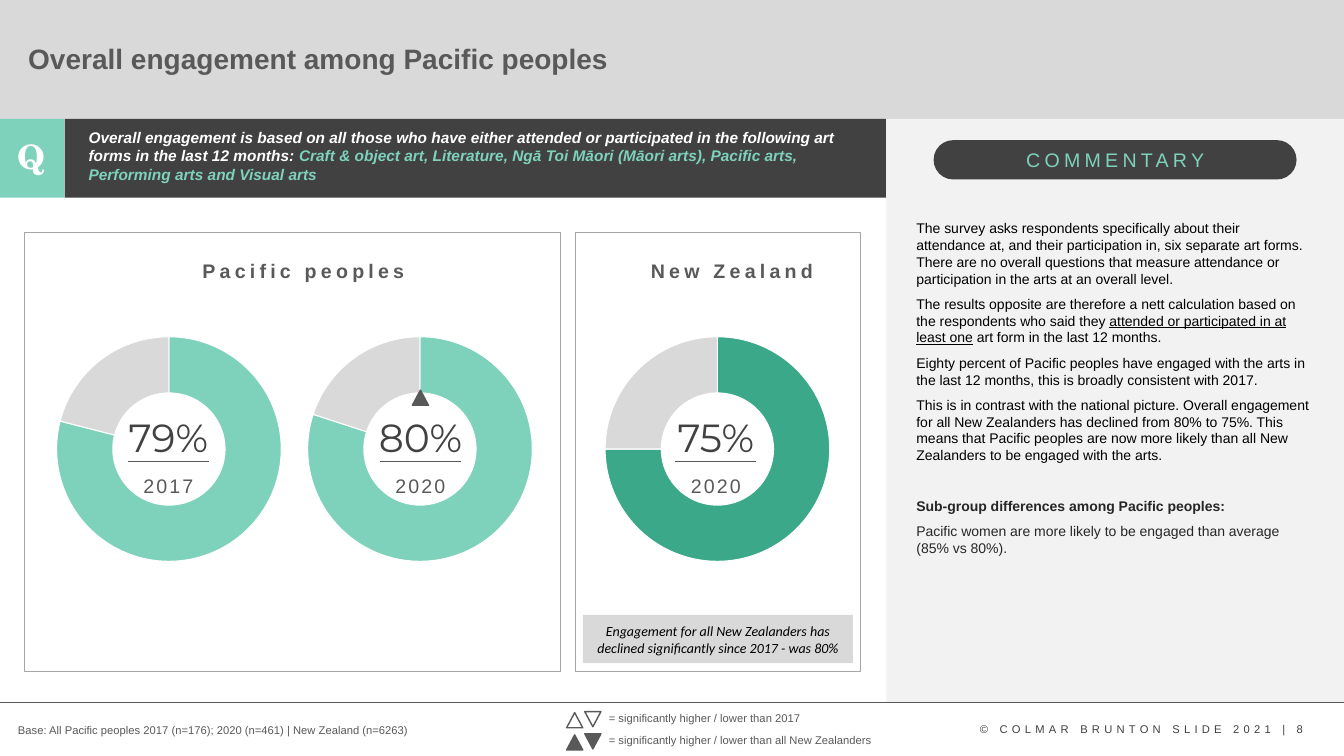
from lxml import etree
from pptx import Presentation
from pptx.chart.data import CategoryChartData
from pptx.dml.color import RGBColor
from pptx.enum.chart import XL_CHART_TYPE
from pptx.enum.shapes import MSO_CONNECTOR, MSO_SHAPE
from pptx.enum.text import MSO_ANCHOR, MSO_AUTO_SIZE, PP_ALIGN
from pptx.oxml import parse_xml
from pptx.oxml.ns import nsdecls, qn
from pptx.util import Inches, Pt

WHITE = RGBColor(0xFF, 0xFF, 0xFF)
BLACK = RGBColor(0, 0, 0)
INK = RGBColor(0x26, 0x26, 0x26)
CHARCOAL = RGBColor(0x41, 0x41, 0x41)
FOOTER_GREY = RGBColor(0x40, 0x40, 0x40)
GREY = RGBColor(0x59, 0x59, 0x59)
FRAME_GREY = RGBColor(0xA6, 0xA6, 0xA6)
LIGHT_GREY = RGBColor(0xD9, 0xD9, 0xD9)
PALE_GREY = RGBColor(0xF2, 0xF2, 0xF2)
MINT = RGBColor(0x7E, 0xD2, 0xBB)
GREEN = RGBColor(0x3A, 0xA8, 0x89)

presentation = Presentation()
presentation.slide_width = Inches(13.33)
presentation.slide_height = Inches(7.5)
slide = presentation.slides.add_slide(presentation.slide_layouts[5])


def add_shape(kind, left, top, width, height, fill=None, line=None, weight=1.0):
    shape = slide.shapes.add_shape(
        kind, Inches(left), Inches(top), Inches(width), Inches(height))
    shape.shadow.inherit = False
    if fill is None:
        shape.fill.background()
    else:
        shape.fill.solid()
        shape.fill.fore_color.rgb = fill
    if line is None:
        shape.line.fill.background()
    else:
        shape.line.color.rgb = line
        shape.line.width = Pt(weight)
    return shape


def add_text(runs, place=None, shape=None, size=10, color=GREY, font="Arial",
             bold=False, italic=False, align=PP_ALIGN.LEFT, spacing=0,
             wrap=True, before=0, new_paragraph=False):
    """Write a string, or (text, changes) runs, into a shape or a new text box."""
    if shape is None:
        shape = slide.shapes.add_textbox(*[Inches(length) for length in place])
        shape.text_frame.auto_size = MSO_AUTO_SIZE.SHAPE_TO_FIT_TEXT
    frame = shape.text_frame
    frame.word_wrap = wrap
    paragraph = frame.add_paragraph() if new_paragraph else frame.paragraphs[0]
    paragraph.alignment = align
    paragraph.space_before = Pt(before)
    for text, changes in [(runs, {})] if isinstance(runs, str) else runs:
        run = paragraph.add_run()
        run.text = text
        run.font.name = font
        run.font.size = Pt(size)
        run.font.bold = bold
        run.font.italic = italic
        run.font.underline = changes.get("underline")
        run.font.color.rgb = changes.get("color", color)
        if spacing:
            run.font._element.set("spc", str(int(spacing * 100)))
    return shape


# Title band
band = add_shape(MSO_SHAPE.RECTANGLE, 0, -0.02, 13.33, 1.2, LIGHT_GREY)
title = slide.shapes.title
title.left, title.top = Inches(0.18), Inches(0.21)
title.width, title.height = Inches(11.19), Inches(0.78)
add_text("Overall engagement among Pacific peoples", shape=title, size=20, bold=True)
title.text_frame.vertical_anchor = MSO_ANCHOR.MIDDLE
title.text_frame.paragraphs[0].line_spacing = 0.9
band._element.addnext(title._element)

# Question strip
add_shape(MSO_SHAPE.RECTANGLE, 0.64, 1.18, 8.15, 0.78, CHARCOAL)
add_shape(MSO_SHAPE.RECTANGLE, 0, 1.18, 0.64, 0.78, MINT)
add_text("Q", (0.08, 1.3, 0.47, 0.5), size=24, color=WHITE,
         font="TeX Gyre Schola", bold=True, align=PP_ALIGN.CENTER)
add_text([
    ("Overall engagement is based on all those who have either attended or "
     "participated in the following art forms in the last 12 months: ", {}),
    ("Craft & object art, Literature, Ngā Toi Māori (Māori arts), Pacific arts, "
     "Performing arts and Visual arts", {"color": MINT}),
], (0.78, 1.22, 7.92, 0.66), size=11, color=WHITE, bold=True, italic=True)

# Commentary panel
add_shape(MSO_SHAPE.RECTANGLE, 8.79, 1.18, 4.55, 5.79, PALE_GREY)
pill = add_shape(MSO_SHAPE.ROUNDED_RECTANGLE, 9.26, 1.39, 3.6, 0.39, CHARCOAL)
pill.adjustments[0] = 0.5
add_text("COMMENTARY", (10.08, 1.42, 2.02, 0.34), size=14, color=MINT,
         spacing=3, wrap=False)
commentary = add_text(
    "The survey asks respondents specifically about their attendance at, and their "
    "participation in, six separate art forms. There are no overall questions that "
    "measure attendance or participation in the arts at an overall level.",
    (8.99, 2.13, 4.11, 3.47), color=BLACK)
for runs, color, bold, before in [
    ([("The results opposite are therefore a nett calculation based on the "
       "respondents who said they ", {}),
      ("attended or participated in at least one", {"underline": True}),
      (" art form in the last 12 months.", {})], BLACK, False, 6),
    ("Eighty percent of Pacific peoples have engaged with the arts in the last "
     "12 months, this is broadly consistent with 2017.", BLACK, False, 6),
    ("This is in contrast with the national picture. Overall engagement for all New "
     "Zealanders has declined from 80% to 75%. This means that Pacific peoples are "
     "now more likely than all New Zealanders to be engaged with the arts.",
     BLACK, False, 6),
    ("Sub-group differences among Pacific peoples:", INK, True, 24),
    ("Pacific women are more likely to be engaged than average (85% vs 80%).",
     INK, False, 6),
]:
    add_text(runs, shape=commentary, color=color, bold=bold, before=before,
             new_paragraph=True)

# Framed panels with headings
for heading, frame_left, frame_width, text_left, text_width in [
    ("Pacific peoples", 0.24, 5.32, 1.88, 2.26),
    ("New Zealand", 5.71, 2.82, 6.33, 1.86),
]:
    add_shape(MSO_SHAPE.RECTANGLE, frame_left, 2.31, frame_width, 4.35,
              line=FRAME_GREY, weight=0.5)
    add_text(heading, (text_left, 2.52, text_width, 0.34), size=14, bold=True,
             align=PP_ALIGN.CENTER, spacing=3, wrap=False)

# Doughnuts with their centre labels
rules = [(0, 6.97, 13.33)]
for engaged, year, color, chart_left, center in [
    (79, "2017", MINT, -0.21, 1.67),
    (80, "2020", MINT, 2.28, 4.17),
    (75, "2020", GREEN, 5.23, 7.1),
]:
    data = CategoryChartData()
    data.categories = ["1", "2"]
    data.add_series("Series 1", (engaged, 100 - engaged))
    chart = slide.shapes.add_chart(
        XL_CHART_TYPE.DOUGHNUT, Inches(chart_left), Inches(3.01),
        Inches(3.69), Inches(2.81), data).chart
    chart.has_legend = False
    chart.has_title = False
    chart.font.name = "Arial"
    chart.font.size = Pt(12)
    chart.font.color.rgb = WHITE
    plot = chart.plots[0]
    plot.vary_by_categories = False
    for index, slice_color in enumerate((color, LIGHT_GREY)):
        point = plot.series[0].points[index]
        point.format.fill.solid()
        point.format.fill.fore_color.rgb = slice_color
        point.format.line.color.rgb = WHITE
        point.format.line.width = Pt(0.75)
    plot_area = chart._chartSpace.chart.plotArea
    plot_area.find(".//" + qn("c:holeSize")).set("val", "74")
    for old_layout in plot_area.findall(qn("c:layout")):
        plot_area.remove(old_layout)
    plot_area.insert(0, parse_xml(
        f'<c:layout {nsdecls("c")}><c:manualLayout><c:layoutTarget val="inner"/>'
        '<c:xMode val="edge"/><c:yMode val="edge"/><c:x val="0.209"/>'
        '<c:y val="0.118"/><c:w val="0.604"/><c:h val="0.793"/>'
        '</c:manualLayout></c:layout>'))
    add_text(f"{engaged}%", (center - 0.56, 4.05, 1.12, 0.57), size=28,
             color=CHARCOAL, font="Montserrat", align=PP_ALIGN.CENTER, wrap=False)
    add_text(year, (center - 0.36, 4.65, 0.72, 0.34), size=14,
             align=PP_ALIGN.CENTER, spacing=1.5, wrap=False)
    rules.append((center - 0.4, 4.58, center + 0.4))

# Footer rule and the rules under the percentages
for start, top, end in rules:
    rule = slide.shapes.add_connector(
        MSO_CONNECTOR.STRAIGHT, Inches(start), Inches(top), Inches(end), Inches(top))
    rule.line.color.rgb = GREY
    rule.line.width = Pt(0.5)
    etree.SubElement(rule._element.spPr, qn("a:effectLst"))

# Significance marker and note
add_shape(MSO_SHAPE.ISOSCELES_TRIANGLE, 4.09, 3.87, 0.16, 0.15, GREY, GREY)
note = add_shape(MSO_SHAPE.RECTANGLE, 5.78, 6.1, 2.68, 0.48, LIGHT_GREY)
note.text_frame.vertical_anchor = MSO_ANCHOR.MIDDLE
add_text("Engagement for all New Zealanders has declined significantly since 2017 "
         "- was 80%", shape=note, color=BLACK, font="Calibri", italic=True,
         align=PP_ALIGN.CENTER)

# Footer with legend
add_text("Base: All Pacific peoples 2017 (n=176); 2020 (n=461) | New Zealand (n=6263)",
         (0.08, 7.13, 5.15, 0.24), size=8)
for label, top, width, fill in [
    ("= significantly higher / lower than 2017", 7.01, 2.13, WHITE),
    ("= significantly higher / lower than all New Zealanders", 7.23, 2.84, GREY),
]:
    caption = add_text(label, (5.94, top, width, 0.24), size=8, wrap=False)
    higher = add_shape(MSO_SHAPE.ISOSCELES_TRIANGLE, 5.62, top + 0.06, 0.16, 0.15,
                       fill, GREY)
    lower = add_shape(MSO_SHAPE.ISOSCELES_TRIANGLE, 5.8, top + 0.05, 0.16, 0.15,
                      fill, GREY)
    lower.rotation = 180
    slide.shapes.add_group_shape([caption, higher, lower])
add_text("© COLMAR BRUNTON SLIDE 2021 | 8", (9.62, 7.12, 3.61, 0.24), size=8,
         color=FOOTER_GREY, spacing=3)

presentation.save("out.pptx")
